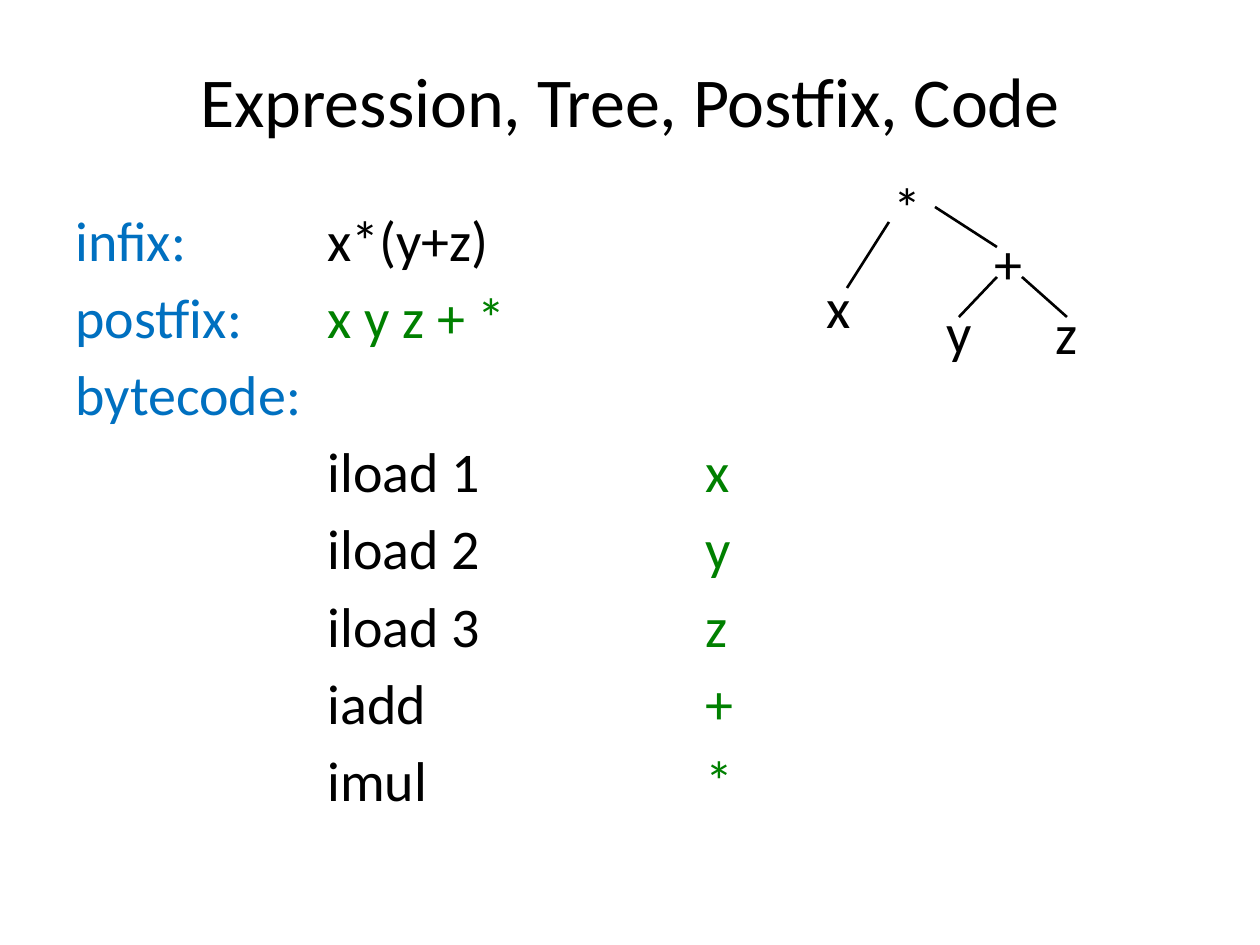
from lxml.etree import SubElement
from pptx import Presentation
from pptx.dml.color import RGBColor
from pptx.enum.shapes import MSO_CONNECTOR
from pptx.enum.text import MSO_ANCHOR, PP_ALIGN
from pptx.oxml.ns import qn
from pptx.util import Emu, Pt

# Content
COLORS = {"ink": "000000", "label": "0070C0", "stack": "008000"}
TITLE = "Expression, Tree, Postfix, Code"
TITLE_BOX = (63, 21, 1134, 158)
BODY_BOX = (63, 199, 827, 641)
TAB_STOPS = (252, 630)
# Each row lists (text, colour); a tab moves to the next column
ROWS = [
    [("infix:", "label"), ("\tx*(y+z)", "ink")],
    [("postfix:", "label"), ("\tx y z + *", "stack")],
    [("bytecode:", "label")],
] + [
    [("\t" + instruction, "ink"), ("\t" + symbol, "stack")]
    for instruction, symbol in [
        ("iload 1", "x"), ("iload 2", "y"), ("iload 3", "z"), ("iadd", "+"), ("imul", "*"),
    ]
]
# Tree nodes: text, left, top, width
NODES = [("*", 881, 166, 54), ("x", 814, 266, 50), ("y", 934, 291, 52),
         ("z", 1043, 292, 48), ("+", 982, 222, 54)]
NODE_HEIGHT = 81
# Tree edges: parent end, child end
EDGES = [((889, 222), (847, 288)), ((935, 207), (997, 247)),
         ((1022, 277), (1067, 317)), ((997, 277), (959, 317))]
FONT = "Calibri"
SCALE = 914400 // 126


def px(value):
    return Emu(value * SCALE)


def color(name):
    return RGBColor.from_string(COLORS[name])


def add_text(page, frame, rows, size, wrap=True, **para_format):
    box = page.shapes.add_textbox(*map(px, frame))
    box.text_frame.word_wrap = wrap
    for index, row in enumerate(rows):
        para = box.text_frame.paragraphs[0] if index == 0 else box.text_frame.add_paragraph()
        for key, value in para_format.items():
            setattr(para, key, value)
        for text, tone in row:
            span = para.add_run()
            span.text = text
            for key, value in {"name": FONT, "size": Pt(size)}.items():
                setattr(span.font, key, value)
            span.font.color.rgb = color(tone)
    return box


def add_tab_stops(para):
    stops = SubElement(para._p.get_or_add_pPr(), qn("a:tabLst"))
    for stop in TAB_STOPS:
        SubElement(stops, qn("a:tab"), pos=str(px(stop)), algn="l")


def add_edge(page, start, end):
    line = page.shapes.add_connector(MSO_CONNECTOR.STRAIGHT, *map(px, start + end))
    line.line.color.rgb = color("ink")
    line.line.width = Pt(1.5)
    SubElement(line._element.spPr, qn("a:effectLst"))


def main():
    deck = Presentation()
    deck.slide_width, deck.slide_height = px(1260), px(945)
    page = deck.slides.add_slide(deck.slide_layouts[6])

    # Title
    title = add_text(page, TITLE_BOX, [[(TITLE, "ink")]], 40, alignment=PP_ALIGN.CENTER)
    title.text_frame.vertical_anchor = MSO_ANCHOR.MIDDLE

    # Notations and bytecode in three columns
    body = add_text(page, BODY_BOX, ROWS, 32, space_before=Pt(5.7))
    body.text_frame.paragraphs[0].space_before = Pt(0)
    for para in body.text_frame.paragraphs:
        add_tab_stops(para)

    # Expression tree
    for text, left, top, width in NODES:
        add_text(page, (left, top, width, NODE_HEIGHT), [[(text, "ink")]], 32, wrap=False)
    for start, end in EDGES:
        add_edge(page, start, end)

    deck.save("out.pptx")


if __name__ == "__main__":
    main()
